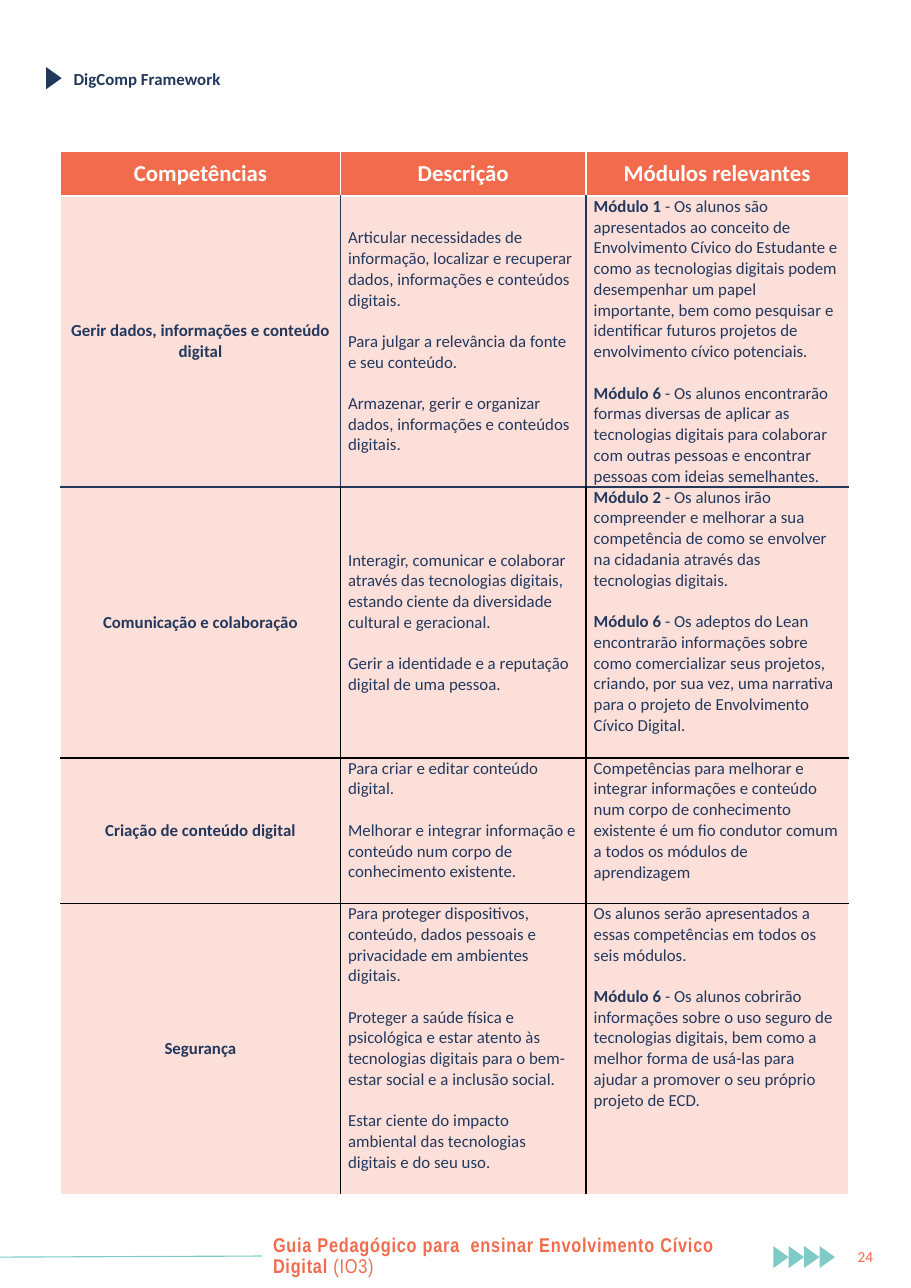
from pptx import Presentation
from pptx.dml.color import RGBColor
from pptx.enum import shapes, text
from pptx.oxml import ns, xmlchemy
from pptx.util import Inches, Pt
from lxml import etree

ORANGE = RGBColor(0xF2, 0x6B, 0x4D)
TEAL = RGBColor(0x7F, 0xCC, 0xC7)
NAVY = RGBColor(0x22, 0x38, 0x5A)
BODY_NAVY = RGBColor(0x23, 0x38, 0x5C)
WHITE = RGBColor(0xFF, 0xFF, 0xFF)
BLACK = RGBColor(0x00, 0x00, 0x00)

LEFT, CENTER, JUSTIFY = text.PP_ALIGN.LEFT, text.PP_ALIGN.CENTER, text.PP_ALIGN.JUSTIFY
TOP, MIDDLE = text.MSO_ANCHOR.TOP, text.MSO_ANCHOR.MIDDLE

COLUMN_WIDTHS = [2.54, 2.23, 2.38]
ROW_HEIGHTS = [0.41, 2.64, 2.46, 1.32, 2.64]
ROW_RULES = [WHITE, WHITE, NAVY, BLACK, BLACK, WHITE]
COLUMN_RULES = [WHITE, NAVY, BLACK, BLACK, BLACK]

HEADINGS = ["Competências", "Descrição", "Módulos relevantes"]
# Each line is a paragraph; words before "|" are bold
COMPETENCES = [
    ("Gerir dados, informações e conteúdo digital",
     "Articular necessidades de informação, localizar e recuperar dados, "
     "informações e conteúdos digitais.\n"
     "Para julgar a relevância da fonte e seu conteúdo.\n"
     "Armazenar, gerir e organizar dados, informações e conteúdos digitais.",
     "Módulo 1 |- Os alunos são apresentados ao conceito de Envolvimento Cívico do "
     "Estudante e como as tecnologias digitais podem desempenhar um papel importante, "
     "bem como pesquisar e identificar futuros projetos de envolvimento cívico potenciais.\n"
     "Módulo 6 |- Os alunos encontrarão formas diversas de aplicar as tecnologias digitais "
     "para colaborar com outras pessoas e encontrar pessoas com ideias semelhantes."),
    ("Comunicação e colaboração",
     "Interagir, comunicar e colaborar através das tecnologias digitais, estando ciente "
     "da diversidade cultural e geracional.\n"
     "Gerir a identidade e a reputação digital de uma pessoa.",
     "Módulo 2 |- Os alunos irão compreender e melhorar a sua competência de como se "
     "envolver na cidadania através das tecnologias digitais.\n"
     "Módulo 6 |- Os adeptos do Lean encontrarão informações sobre como comercializar seus "
     "projetos, criando, por sua vez, uma narrativa para o projeto de Envolvimento Cívico "
     "Digital."),
    ("Criação de conteúdo digital",
     "Para criar e editar conteúdo digital.\n"
     "Melhorar e integrar informação e conteúdo num corpo de conhecimento existente.",
     "Competências para melhorar e integrar informações e conteúdo num corpo de "
     "conhecimento existente é um fio condutor comum a todos os módulos de aprendizagem"),
    ("Segurança",
     "Para proteger dispositivos, conteúdo, dados pessoais e privacidade em ambientes "
     "digitais.\n"
     "Proteger a saúde física e psicológica e estar atento às tecnologias digitais para o "
     "bem-estar social e a inclusão social.\n"
     "Estar ciente do impacto ambiental das tecnologias digitais e do seu uso.",
     "Os alunos serão apresentados a essas competências em todos os seis módulos.\n"
     "Módulo 6 |- Os alunos cobrirão informações sobre o uso seguro de tecnologias "
     "digitais, bem como a melhor forma de usá-las para ajudar a promover o seu próprio "
     "projeto de ECD."),
]
DESCRIPTION_ANCHORS = [MIDDLE, MIDDLE, TOP, TOP]


def write_text(frame, content, size=11, color=BODY_NAVY, font="Calibri", bold=False,
               align=LEFT, line_spacing=None, gap=13.4, tracking=None):
    frame.word_wrap = True
    for index, line in enumerate(content.split("\n")):
        paragraph = frame.add_paragraph() if index else frame.paragraphs[0]
        paragraph.alignment = align
        if line_spacing:
            paragraph.line_spacing = line_spacing
        if index:
            paragraph.space_before = Pt(gap)
        lead, separator, rest = line.partition("|")
        for words, is_bold in ((lead, bold or bool(separator)), (rest, False)):
            if not words:
                continue
            run = paragraph.add_run()
            run.text = words
            run.font.name = font
            run.font.size = Pt(size)
            run.font.bold = is_bold
            run.font.color.rgb = color
            if tracking:
                run.font._element.set("spc", str(int(tracking * 100)))


def add_text(slide, left, top, width, height, content, anchor=TOP, **text_format):
    box = slide.shapes.add_textbox(Inches(left), Inches(top), Inches(width), Inches(height))
    write_text(box.text_frame, content, **text_format)
    box.text_frame.vertical_anchor = anchor


def add_arrowhead(slide, left, top, color):
    width, height = 0.14, 0.2
    builder = slide.shapes.build_freeform(Inches(left + width), Inches(top + height / 2))
    builder.add_line_segments([(Inches(left), Inches(top)),
                               (Inches(left), Inches(top + height))], close=True)
    arrowhead = builder.convert_to_shape()
    arrowhead.shadow.inherit = False
    arrowhead.fill.solid()
    arrowhead.fill.fore_color.rgb = color
    arrowhead.line.fill.background()


def add_rule(slide, start, end, color, width):
    rule = slide.shapes.add_connector(shapes.MSO_CONNECTOR.STRAIGHT,
                                      *(Inches(value) for value in start + end))
    rule.line.color.rgb = color
    rule.line.width = Pt(width)
    etree.SubElement(rule._element.spPr, ns.qn("a:effectLst"))


def set_borders(cell, colors):
    properties = cell._tc.get_or_add_tcPr()
    for index, (side, color) in enumerate(zip("LRTB", colors)):
        border = etree.Element(ns.qn(f"a:ln{side}"), w=str(Pt(1)))
        fill = etree.SubElement(border, ns.qn("a:solidFill"))
        etree.SubElement(fill, ns.qn("a:srgbClr"), val=str(color))
        properties.insert(index, border)


def fill_cell(cell, content, opacity=None, anchor=MIDDLE, **text_format):
    cell.margin_left = cell.margin_right = Inches(0.07)
    cell.margin_top = cell.margin_bottom = 0
    cell.vertical_anchor = anchor
    cell.fill.solid()
    cell.fill.fore_color.rgb = ORANGE
    if opacity:
        color = cell._tc.tcPr.find(".//" + ns.qn("a:srgbClr"))
        etree.SubElement(color, ns.qn("a:alpha"), val=str(opacity * 1000))
    write_text(cell.text_frame, content, **text_format)


def add_competence_table(slide):
    table = slide.shapes.add_table(
        len(ROW_HEIGHTS), len(COLUMN_WIDTHS), Inches(0.55), Inches(1.37),
        Inches(sum(COLUMN_WIDTHS)), Inches(sum(ROW_HEIGHTS))).table
    table.horz_banding = False
    for column, width in zip(table.columns, COLUMN_WIDTHS):
        column.width = Inches(width)
    for row, height in zip(table.rows, ROW_HEIGHTS):
        row.height = Inches(height)

    # Header row
    for column, heading in enumerate(HEADINGS):
        fill_cell(table.cell(0, column), heading, size=14.9, color=WHITE,
                  bold=True, align=CENTER)

    # Competence rows
    for row, (name, description, modules) in enumerate(COMPETENCES, start=1):
        fill_cell(table.cell(row, 0), name, opacity=21, bold=True, align=CENTER)
        fill_cell(table.cell(row, 1), description, opacity=21,
                  anchor=DESCRIPTION_ANCHORS[row - 1])
        fill_cell(table.cell(row, 2), modules, opacity=21, anchor=TOP)

    # Cell borders: white outside, coloured between cells
    for row, inner in enumerate(COLUMN_RULES):
        verticals = [WHITE, inner, inner, WHITE]
        for column in range(len(COLUMN_WIDTHS)):
            set_borders(table.cell(row, column),
                        verticals[column:column + 2] + ROW_RULES[row:row + 2])


def main():
    presentation = Presentation()
    presentation.slide_width, presentation.slide_height = Inches(8.27), Inches(11.69)
    slide = presentation.slides.add_slide(presentation.slide_layouts[6])

    # Footer ornaments and page number
    add_text(slide, 7.66, 11.26, 0.39, 0.29, "24", anchor=MIDDLE, size=10,
             color=ORANGE, align=CENTER)
    for index in range(4):
        add_arrowhead(slide, 7.02 + index * 0.14, 11.31, TEAL)
    add_rule(slide, (0, 11.41), (2.38, 11.4), TEAL, 0.75)

    # Section title
    add_arrowhead(slide, 0.42, 0.61, NAVY)
    add_text(slide, 0.57, 0.59, 7.15, 0.55, "DigComp Framework", color=NAVY,
             bold=True, align=JUSTIFY, line_spacing=0.9)

    add_competence_table(slide)

    # Guide title
    add_text(slide, 2.38, 11.13, 4.72, 0.55,
             "Guia Pedagógico para  ensinar Envolvimento Cívico Digital |(IO3)",
             anchor=MIDDLE, size=13, color=ORANGE, font="Arial Narrow",
             line_spacing=0.9, tracking=0.5)

    presentation.save("out.pptx")


if __name__ == "__main__":
    main()
